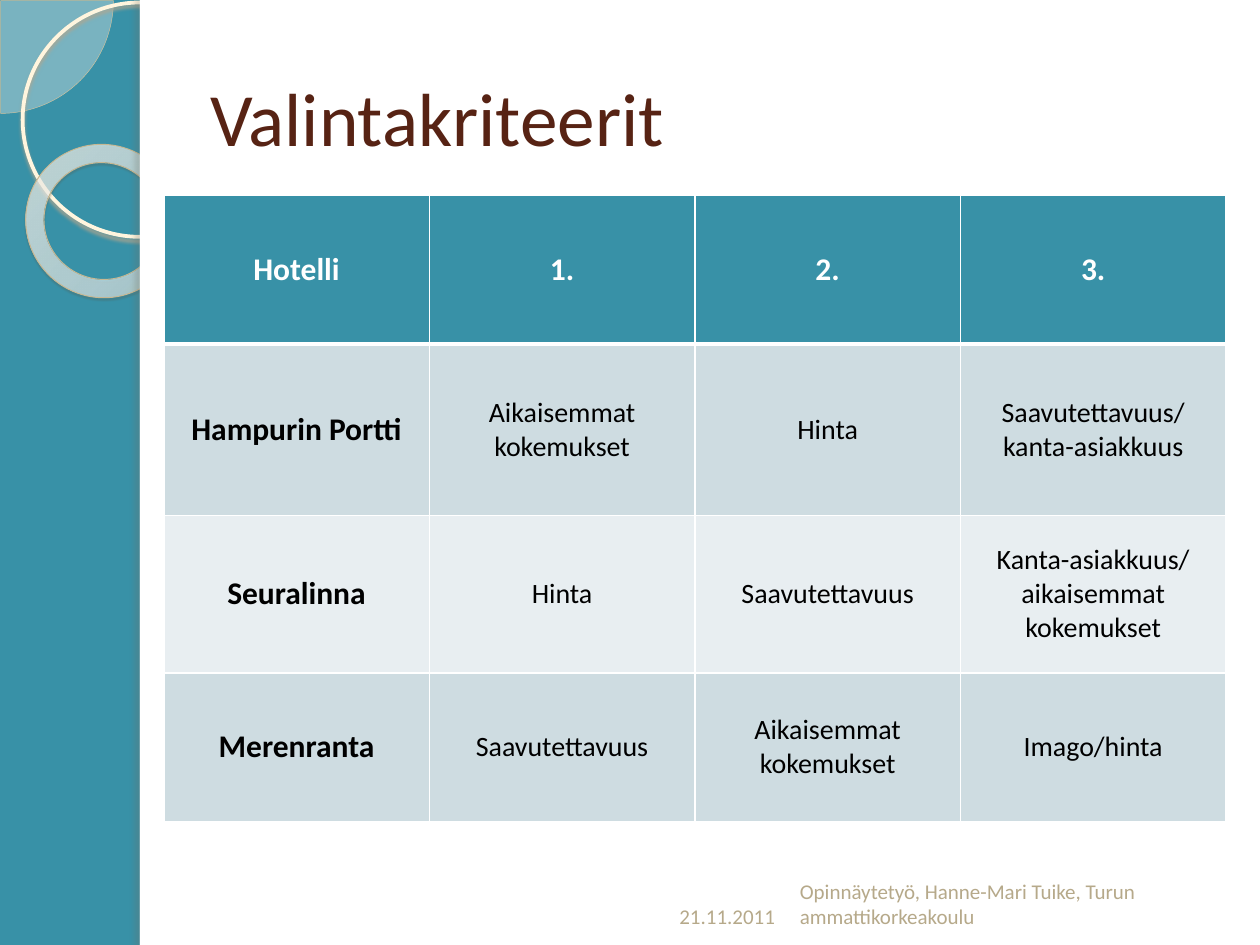
from lxml import etree
from pptx import Presentation
from pptx.dml.color import RGBColor
from pptx.enum import shapes, text
from pptx.oxml import parse_xml
from pptx.oxml.ns import qn
from pptx.util import Inches, Pt

NS = 'xmlns:a="http://schemas.openxmlformats.org/drawingml/2006/main"'
FONT = "Calibri"
TEAL, WHITE, BLACK = "3891A7", "FFFFFF", "000000"
BROWN, SAND = "572314", "B6A98A"
BANDS = ["CEDCE1", "E8EEF1"]
ROWS = [
    ["Hotelli", "1.", "2.", "3."],
    ["Hampurin Portti", "Aikaisemmat kokemukset", "Hinta", "Saavutettavuus/\nkanta-asiakkuus"],
    ["Seuralinna", "Hinta", "Saavutettavuus", "Kanta-asiakkuus/\naikaisemmat kokemukset"],
    ["Merenranta", "Saavutettavuus", "Aikaisemmat kokemukset", "Imago/hinta"],
]
ROW_HEIGHTS = [1.18, 1.36, 1.25, 1.18]


def rgb(color):
    return RGBColor.from_string(color)


def color_xml(color, alpha=100):
    return f'<a:srgbClr val="{color}"><a:alpha val="{alpha * 1000}"/></a:srgbClr>'


def add_shape(s, kind, box, fill=None, line=None, width=1):
    sp = s.shapes.add_shape(kind, *map(Inches, box))
    sp.shadow.inherit = False
    if fill:
        sp.fill.solid()
        sp.fill.fore_color.rgb = rgb(fill)
    else:
        sp.fill.background()
    if line:
        sp.line.color.rgb = rgb(line)
        sp.line.width = Pt(width)
    else:
        sp.line.fill.background()
    return sp


def set_shadow(sp, color, alpha, blur, dist, angle):
    effects = sp._element.spPr.find(qn("a:effectLst"))
    effects.append(parse_xml(
        f'<a:outerShdw {NS} blurRad="{Pt(blur)}" dist="{Pt(dist)}" dir="{angle * 60000}" '
        f'algn="tl" rotWithShape="0">{color_xml(color, alpha)}</a:outerShdw>'))


def set_radial_gradient(sp, stops, rect):
    """Replace the fill; rect holds the left, top, right and bottom focus percentages."""
    stops_xml = "".join(f'<a:gs pos="{pos * 1000}">{color_xml(color, alpha)}</a:gs>'
                        for pos, color, alpha in stops)
    sides = " ".join(f'{side}="{value * 1000}"' for side, value in zip("ltrb", rect))
    spPr = sp._element.spPr
    spPr.replace(spPr.find(qn("a:noFill")), parse_xml(
        f'<a:gradFill {NS} rotWithShape="1"><a:gsLst>{stops_xml}</a:gsLst>'
        f'<a:path path="circle"><a:fillToRect {sides}/></a:path></a:gradFill>'))


def write(tf, content, size, color, align, bold=False):
    p = tf.paragraphs[0]
    p.text = content
    p.alignment = align
    for r in p.runs:
        r.font.name = FONT
        r.font.size = Pt(size)
        r.font.bold = bold
        r.font.color.rgb = rgb(color)


def add_text(s, box, content, size, color, anchor, align=text.PP_ALIGN.LEFT):
    tf = s.shapes.add_textbox(*map(Inches, box)).text_frame
    tf.word_wrap = True
    tf.vertical_anchor = anchor
    write(tf, content, size, color, align)


def set_borders(cell, widths):
    """Draw white borders of the given widths: left, right, top, bottom."""
    tcPr = cell._tc.get_or_add_tcPr()
    for i, (side, width) in enumerate(zip("LRTB", widths)):
        tcPr.insert(i, parse_xml(
            f'<a:ln{side} {NS} w="{Pt(width)}"><a:solidFill>{color_xml(WHITE)}'
            f'</a:solidFill></a:ln{side}>'))


def add_criteria_table(s):
    table = s.shapes.add_table(len(ROWS), len(ROWS[0]), Inches(1.3), Inches(1.55),
                               Inches(8.43), Inches(sum(ROW_HEIGHTS))).table
    for i, (row, height) in enumerate(zip(ROWS, ROW_HEIGHTS)):
        table.rows[i].height = Inches(height)
        header = i == 0
        for j, content in enumerate(row):
            cell = table.cell(i, j)
            cell.vertical_anchor = text.MSO_ANCHOR.MIDDLE
            cell.fill.solid()
            cell.fill.fore_color.rgb = rgb(TEAL if header else BANDS[(i - 1) % 2])
            set_borders(cell, [1, 1, 3 if i == 1 else 1, 3 if header else 1])
            strong = header or j == 0
            write(cell.text_frame, content, 18 if strong else 16,
                  WHITE if header else BLACK, text.PP_ALIGN.CENTER, strong)


def add_decoration(s):
    kinds = shapes.MSO_SHAPE
    pie = add_shape(s, kinds.PIE, (-0.89, -0.89, 1.79, 1.79), "FEFAF4", "D3C39F", 0.25)
    pie.adjustments[0], pie.adjustments[1] = 0, 54
    pie_color = pie._element.spPr.find(qn("a:solidFill"))[0]
    etree.SubElement(pie_color, qn("a:alpha"), val="33000")

    ring = add_shape(s, kinds.OVAL, (0.18, 0.02, 1.86, 1.86), None, "FFF5DE", 2.15)
    set_shadow(ring, "B0A68F", 85, 2, 2, 90)

    donut = add_shape(s, kinds.DONUT, (0.2, 1.15, 1.23, 1.21), None, "C7B893", 0.58)
    donut.rotation = 38.6
    donut.adjustments[0] = 0.12
    set_radial_gradient(donut, [(0, "FFFCF6", 70), (70, "FFFEFB", 55), (100, "F0D28E", 60)],
                        (-408, -50, 508, 150))
    set_shadow(donut, "5A5444", 35, 1, 1.2, 75)

    add_shape(s, kinds.RECTANGLE, (1.11, 0, 8.89, 7.5), WHITE)
    edge = add_shape(s, kinds.RECTANGLE, (1.11, 0, 0.08, 7.5), WHITE)
    set_shadow(edge, "736F63", 25, 3, 3, 180)


def main():
    prs = Presentation()
    prs.slide_width, prs.slide_height = Inches(10), Inches(7.5)
    s = prs.slides.add_slide(prs.slide_layouts[6])
    s.background.fill.solid()
    s.background.fill.fore_color.rgb = rgb(TEAL)
    add_decoration(s)
    add_text(s, (1.57, 0.3, 8.2, 1.25), "Valintakriteerit", 43, BROWN, text.MSO_ANCHOR.MIDDLE)
    add_criteria_table(s)
    bottom = text.MSO_ANCHOR.BOTTOM
    add_text(s, (3.92, 6.9, 2.33, 0.52), "21.11.2011", 12, SAND, bottom, text.PP_ALIGN.RIGHT)
    add_text(s, (6.25, 6.9, 3.17, 0.52),
             "Opinnäytetyö, Hanne-Mari Tuike, Turun ammattikorkeakoulu", 12, SAND, bottom)
    prs.save("out.pptx")


if __name__ == "__main__":
    main()
